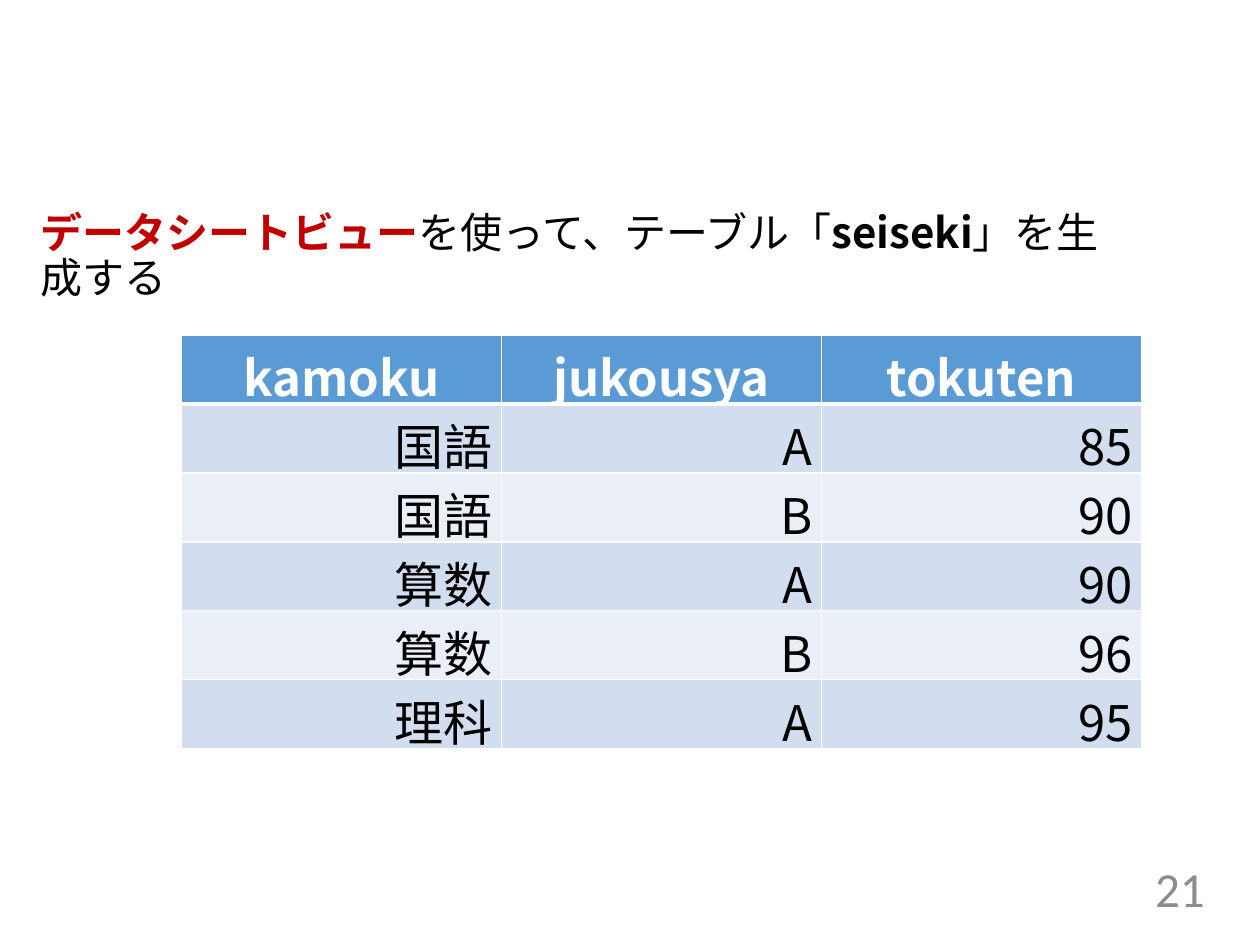
"""Build the slide that shows the seiseki table made in datasheet view."""
from dataclasses import dataclass

from lxml.etree import SubElement
from pptx import Presentation
from pptx.dml.color import RGBColor
from pptx.enum.text import MSO_ANCHOR, PP_ALIGN
from pptx.oxml.ns import qn
from pptx.util import Inches, Pt


@dataclass(frozen=True)
class Theme:
    japanese: str = "Noto Sans CJK JP"
    latin: str = "Calibri"
    ink: str = "000000"
    accent: str = "C00000"
    muted: str = "8C8C8C"
    white: str = "FFFFFF"
    header: str = "5B9BD5"
    bands: tuple = ("D2DEEF", "EAEFF7")
    body_size: int = 24
    table_size: int = 28


theme = Theme()


def style_run(run, face, size, color, bold=False):
    run.font.name = face
    run.font.size = Pt(size)
    run.font.bold = bold
    run.font.color.rgb = RGBColor.from_string(color)
    SubElement(run.font._element, qn("a:ea"), typeface=face)


def add_border(cell, side, width):
    line = SubElement(cell._tc.get_or_add_tcPr(), qn(f"a:ln{side}"), w=str(Pt(width)))
    fill = SubElement(line, qn("a:solidFill"))
    SubElement(fill, qn("a:srgbClr"), val=theme.white)


deck = Presentation()
deck.slide_width, deck.slide_height = Inches(10), Inches(7.5)
slide = deck.slides.add_slide(deck.slide_layouts[6])

page_number = slide.shapes.add_textbox(
    Inches(7.41), Inches(6.9), Inches(2.25), Inches(0.3)).text_frame
page_number.word_wrap = True
page_number.vertical_anchor = MSO_ANCHOR.MIDDLE
page_number.text = "21"
page_number.paragraphs[0].alignment = PP_ALIGN.RIGHT
style_run(page_number.paragraphs[0].runs[0], theme.latin, theme.table_size, theme.muted)

instruction = slide.shapes.add_textbox(
    Inches(0.25), Inches(1.64), Inches(8.57), Inches(1.09)).text_frame
instruction.word_wrap = True
instruction.margin_left = instruction.margin_right = Inches(0.07)
instruction.margin_top = instruction.margin_bottom = Inches(0.04)
sentence = instruction.paragraphs[0]
sentence.line_spacing = 0.9
sentence.space_before = Pt(10)
for words, color, bold in (
    ("データシートビュー", theme.accent, True),
    ("を使って、テーブル「", theme.ink, False),
    ("seiseki", theme.ink, True),
    ("」を生成する", theme.ink, False),
):
    run = sentence.add_run()
    run.text = words
    style_run(run, theme.japanese, theme.body_size, color, bold)

records = (
    ("kamoku", "jukousya", "tokuten"),
    ("国語", "A", "85"),
    ("国語", "B", "90"),
    ("算数", "A", "90"),
    ("算数", "B", "96"),
    ("理科", "A", "95"),
)
column_width, row_height = Inches(2.54), Inches(0.54)
seiseki = slide.shapes.add_table(
    len(records), len(records[0]), Inches(1.44), Inches(2.66),
    column_width * len(records[0]), row_height * len(records)).table

for row, record in enumerate(records):
    is_header = row == 0
    for column, value in enumerate(record):
        cell = seiseki.cell(row, column)
        cell.margin_left = cell.margin_right = Inches(0.07)
        cell.margin_top = cell.margin_bottom = Inches(0.04)
        for side in "LRTB":
            thick = (is_header and side == "B") or (row == 1 and side == "T")
            add_border(cell, side, 3 if thick else 1)
        cell.fill.solid()
        cell.fill.fore_color.rgb = RGBColor.from_string(
            theme.header if is_header else theme.bands[(row - 1) % 2])
        cell.text_frame.text = value
        entry = cell.text_frame.paragraphs[0]
        entry.alignment = PP_ALIGN.CENTER if is_header else PP_ALIGN.RIGHT
        style_run(entry.runs[0], theme.japanese, theme.table_size,
                  theme.white if is_header else theme.ink, is_header)

deck.save("out.pptx")
